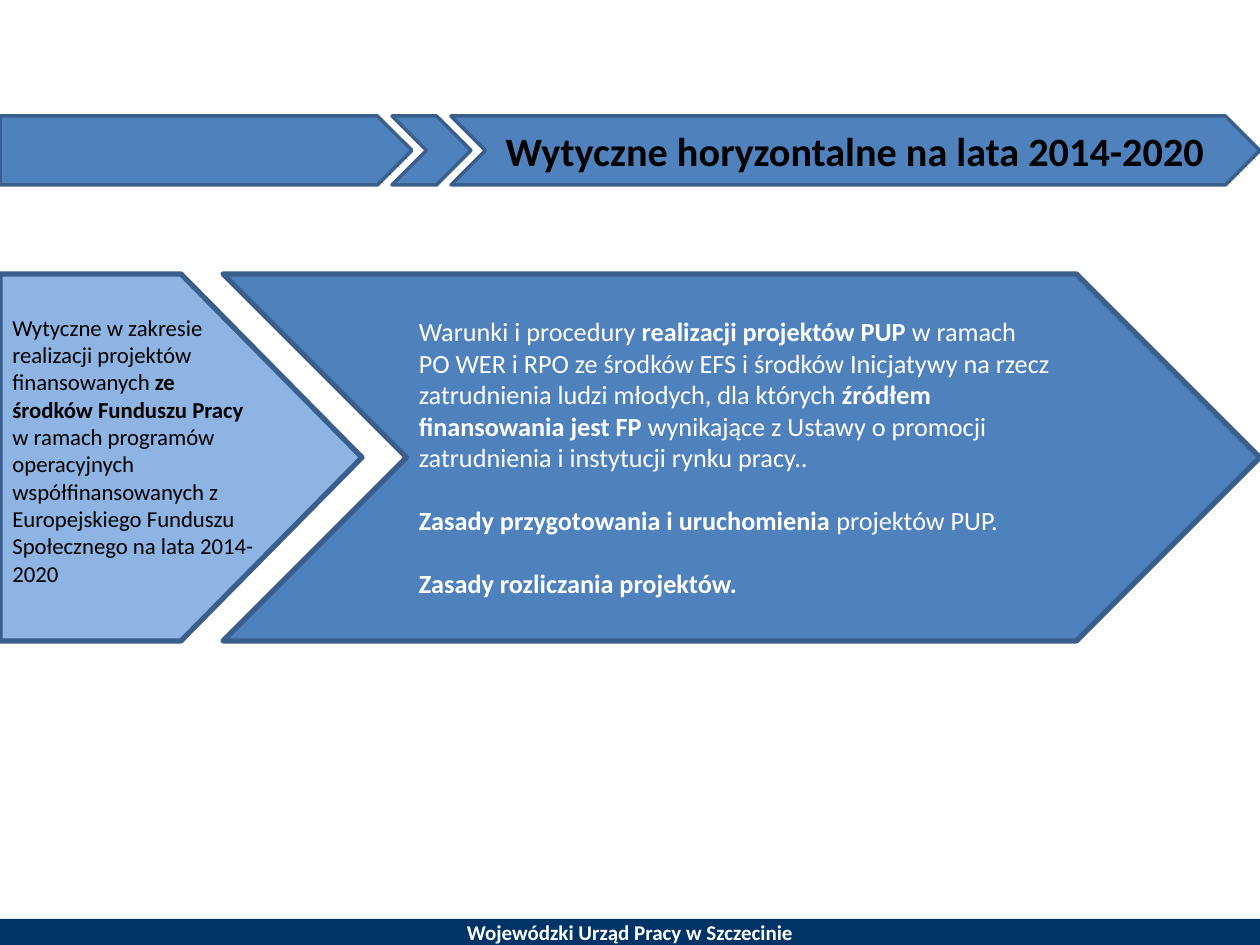
from pptx import Presentation
from pptx.dml.color import RGBColor
from pptx.enum.shapes import MSO_SHAPE as Shape
from pptx.enum.text import MSO_ANCHOR as Anchor, MSO_AUTO_SIZE as AutoSize, PP_ALIGN as Align
from pptx.util import Emu, Pt

PX = 914400 // 126
FONT = "Calibri"
BLUE = RGBColor(0x4F, 0x81, 0xBD)
LIGHT_BLUE = RGBColor(0x8E, 0xB4, 0xE3)
OUTLINE = RGBColor(0x3A, 0x5F, 0x8C)
NAVY = RGBColor(0x00, 0x33, 0x66)
WHITE = RGBColor(0xFF, 0xFF, 0xFF)
BLACK = RGBColor(0x00, 0x00, 0x00)

BAND_TOP, BAND_HEIGHT = 116, 69
PANEL_TOP, PANEL_HEIGHT = 274, 367

# Each paragraph: space before in points, then (text, bold) spans
GUIDELINES = [
    (0, [("Wytyczne w zakresie realizacji projektów finansowanych ", False),
         ("ze środków Funduszu Pracy ", True),
         ("w ramach programów operacyjnych współfinansowanych z Europejskiego "
          "Funduszu Społecznego na lata 2014-2020", False)]),
]
CONDITIONS = [
    (0, [("Warunki i procedury ", False), ("realizacji projektów PUP ", True),
         ("w ramach", False)]),
    (0, [("PO WER i RPO ze środków EFS i środków Inicjatywy na rzecz "
          "zatrudnienia ludzi młodych, dla których ", False),
         ("źródłem finansowania jest FP ", True),
         ("wynikające z Ustawy o promocji", False)]),
    (0, [("zatrudnienia i instytucji rynku pracy..", False)]),
    (18, [("Zasady przygotowania i uruchomienia ", True), ("projektów PUP.", False)]),
    (18, [("Zasady rozliczania projektów.", True)]),
]


def px(value):
    return Emu(value * PX)


def add_block(page, kind, left, top, width, height, fill, line_width=0):
    block = page.shapes.add_shape(kind, px(left), px(top), px(width), px(height))
    block.shadow.inherit = False
    block.fill.solid()
    block.fill.fore_color.rgb = fill
    if line_width:
        block.line.color.rgb = OUTLINE
        block.line.width = Pt(line_width)
    else:
        block.line.fill.background()
    return block


def style(para, size, color, align, bold=None):
    para.alignment = align
    para.font.name = FONT
    para.font.size = Pt(size)
    para.font.color.rgb = color
    para.font.bold = bold


def write_paragraphs(block, paragraphs, size, color):
    frame = block.text_frame
    frame.word_wrap = True
    frame.vertical_anchor = Anchor.MIDDLE
    for index, (space, spans) in enumerate(paragraphs):
        para = frame.add_paragraph() if index else frame.paragraphs[0]
        para.space_before = Pt(space)
        style(para, size, color, Align.LEFT)
        for text, bold in spans:
            span = para.add_run()
            span.text = text
            span.font.bold = bold


def add_footer(page):
    footer = add_block(page, Shape.RECTANGLE, 0, 919, 1260, 26, NAVY)
    frame = footer.text_frame
    frame.word_wrap = False
    frame.vertical_anchor = Anchor.MIDDLE
    frame.margin_top = frame.margin_bottom = 0
    frame.text = "Wojewódzki Urząd Pracy w Szczecinie"
    style(frame.paragraphs[0], 12, WHITE, Align.CENTER, True)


def place_title(page):
    title = page.shapes.title
    title.left, title.top = px(486), px(BAND_TOP)
    title.width, title.height = px(739), px(BAND_HEIGHT)
    frame = title.text_frame
    frame.text = "Wytyczne horyzontalne na lata 2014-2020"
    frame.auto_size = AutoSize.NONE
    frame.vertical_anchor = Anchor.TOP
    frame.margin_top, frame.margin_bottom = px(10), 0
    style(frame.paragraphs[0], 23, BLACK, Align.CENTER, True)
    # Bring the title in front of the band
    title.element.getparent().append(title.element)


def main():
    deck = Presentation()
    deck.slide_width, deck.slide_height = px(1260), px(945)
    page = deck.slides.add_slide(deck.slide_layouts[5])

    add_footer(page)

    # Title band
    for kind, left, width in [(Shape.PENTAGON, 0, 412),
                              (Shape.CHEVRON, 451, 809),
                              (Shape.CHEVRON, 392, 79)]:
        add_block(page, kind, left, BAND_TOP, width, BAND_HEIGHT, BLUE, 2)
    place_title(page)

    # Content arrows
    conditions = add_block(page, Shape.CHEVRON, 223, PANEL_TOP, 1037,
                           PANEL_HEIGHT, BLUE, 3)
    write_paragraphs(conditions, CONDITIONS, 15, WHITE)
    guidelines = add_block(page, Shape.PENTAGON, 0, PANEL_TOP, 362,
                           PANEL_HEIGHT, LIGHT_BLUE, 3)
    write_paragraphs(guidelines, GUIDELINES, 13, BLACK)
    guidelines.text_frame.margin_bottom = px(21)

    deck.save("out.pptx")


if __name__ == "__main__":
    main()
